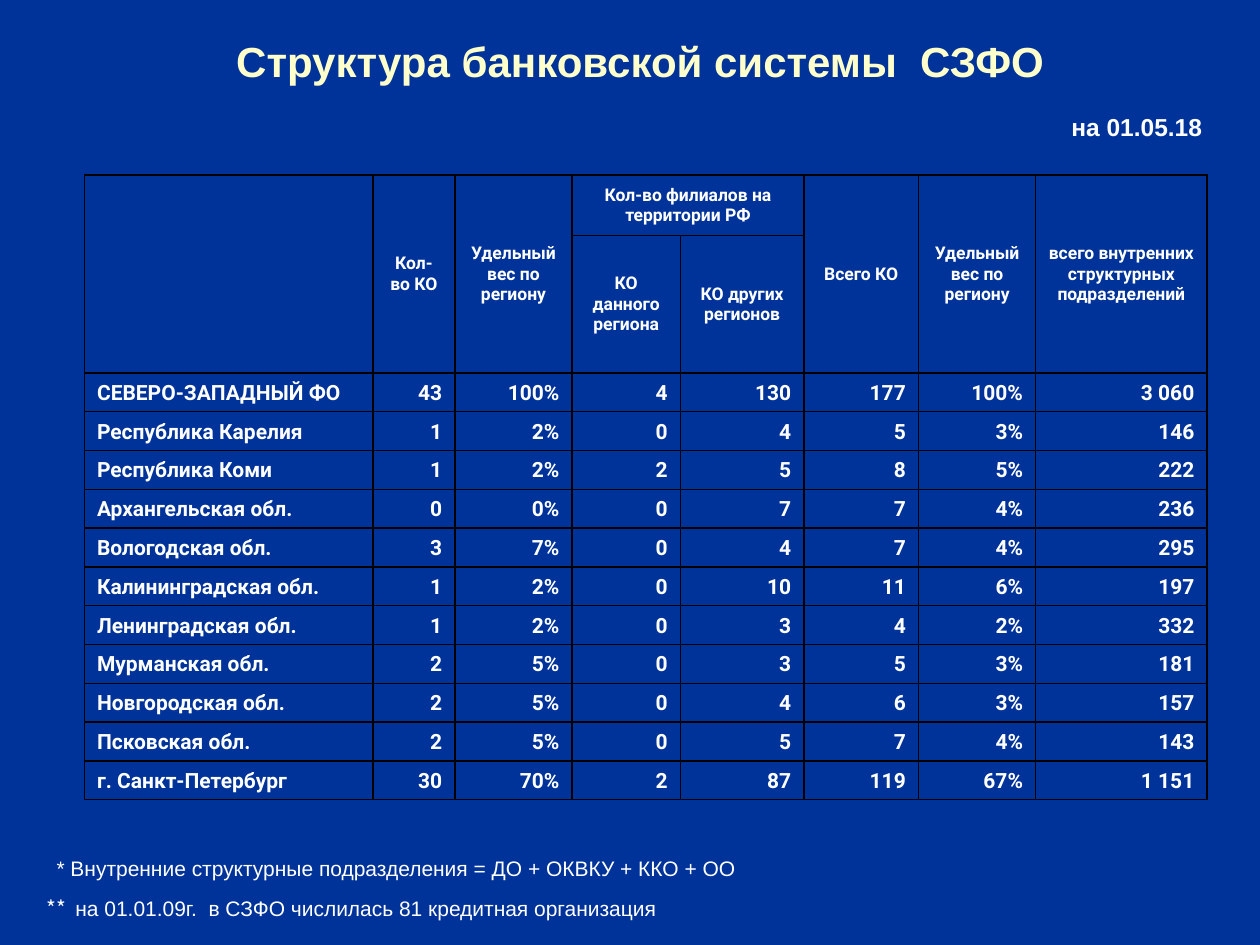
import pptx
import pptx.dml.color
import pptx.enum.text
import pptx.oxml
import pptx.oxml.ns
import pptx.util

ALIGN = pptx.enum.text.PP_ALIGN
ANCHOR = pptx.enum.text.MSO_ANCHOR

WIDTH, HEIGHT = 10, 7.5
BACKGROUND, WHITE, CREAM, BLACK = "003399", "FFFFFF", "FFFFCC", "000000"

# left, top, width, height, alignment, size, bold, colour, (text, font) runs
TEXTS = [
    (1.22, 0.21, 7.72, 0.55, ALIGN.CENTER, 24, True, CREAM,
     [("Структура банковской системы  СЗФО", "Arial")]),
    (0.27, 7.06, 6.93, 0.3, ALIGN.LEFT, 12, False, WHITE,
     [("**  ", "Noto Sans CJK KR"),
      ("на 01.01.09г.  в СЗФО числилась 81 кредитная организация", "Arial")]),
    (0.35, 6.74, 5.91, 0.3, ALIGN.LEFT, 12, False, WHITE,
     [("* Внутренние структурные подразделения = ДО + ОКВКУ + ККО + ОО", "Arial")]),
    (7.36, 0.84, 2.28, 0.33, ALIGN.RIGHT, 14, True, WHITE,
     [("на 01.05.18", "Arial")]),
]

HEADERS = [
    ["", "Кол-во КО", "Удельный вес по региону", "Кол-во филиалов на территории РФ", "",
     "Всего КО", "Удельный вес по региону", "всего внутренних структурных подразделений"],
    ["", "", "", "КО данного региона", "КО других регионов", "", "", ""],
]
REGIONS = [
    ["СЕВЕРО-ЗАПАДНЫЙ ФО", "43", "100%", "4", "130", "177", "100%", "3 060"],
    ["Республика Карелия", "1", "2%", "0", "4", "5", "3%", "146"],
    ["Республика Коми", "1", "2%", "2", "5", "8", "5%", "222"],
    ["Архангельская обл.", "0", "0%", "0", "7", "7", "4%", "236"],
    ["Вологодская обл.", "3", "7%", "0", "4", "7", "4%", "295"],
    ["Калининградская обл.", "1", "2%", "0", "10", "11", "6%", "197"],
    ["Ленинградская обл.", "1", "2%", "0", "3", "4", "2%", "332"],
    ["Мурманская обл.", "2", "5%", "0", "3", "5", "3%", "181"],
    ["Новгородская обл.", "2", "5%", "0", "4", "6", "3%", "157"],
    ["Псковская обл.", "2", "5%", "0", "5", "7", "4%", "143"],
    ["г. Санкт-Петербург", "30", "70%", "2", "87", "119", "67%", "1 151"],
]
TABLE_LEFT, TABLE_TOP, TABLE_HEIGHT = 0.67, 1.39, 4.96
COLUMN_WIDTHS = [2.29, 0.65, 0.93, 0.86, 0.98, 0.91, 0.93, 1.36]
HEADER_HEIGHTS = [0.48, 1.09]
BRANCH_COLUMNS = (3, 4)


def inches(*lengths):
    return [pptx.util.Inches(length) for length in lengths]


def rgb(colour):
    return pptx.dml.color.RGBColor.from_string(colour)


def style(run, font, size, bold, colour):
    run.font.name = font
    run.font.size = pptx.util.Pt(size)
    run.font.bold = bold
    run.font.color.rgb = rgb(colour)


def add_text(slide, left, top, width, height, align, size, bold, colour, runs):
    frame = slide.shapes.add_textbox(*inches(left, top, width, height)).text_frame
    frame.word_wrap = True
    frame.vertical_anchor = ANCHOR.MIDDLE if size == 24 else ANCHOR.TOP
    paragraph = frame.paragraphs[0]
    paragraph.alignment = align
    for text, font in runs:
        run = paragraph.add_run()
        run.text = text
        style(run, font, size, bold, colour)


def set_borders(cell, colour, points):
    properties = cell._tc.get_or_add_tcPr()
    for side in ("lnL", "lnR", "lnT", "lnB"):
        properties.append(pptx.oxml.parse_xml(
            f'<a:{side} {pptx.oxml.ns.nsdecls("a")} w="{pptx.util.Pt(points)}">'
            f'<a:solidFill><a:srgbClr val="{colour}"/></a:solidFill></a:{side}>'))


def add_region_table(slide):
    rows = HEADERS + REGIONS
    row_height = (TABLE_HEIGHT - sum(HEADER_HEIGHTS)) / len(REGIONS)
    heights = HEADER_HEIGHTS + [row_height] * len(REGIONS)
    table = slide.shapes.add_table(
        len(rows), len(COLUMN_WIDTHS),
        *inches(TABLE_LEFT, TABLE_TOP, sum(COLUMN_WIDTHS), TABLE_HEIGHT)).table
    table.first_row = table.horz_banding = False
    for column, width in zip(table.columns, inches(*COLUMN_WIDTHS)):
        column.width = width
    for row, height in zip(table.rows, inches(*heights)):
        row.height = height

    for r, values in enumerate(rows):
        is_header = r < len(HEADERS)
        for c, value in enumerate(values):
            cell = table.cell(r, c)
            set_borders(cell, BLACK, 1)
            cell.fill.background()
            cell.vertical_anchor = ANCHOR.MIDDLE if is_header else ANCHOR.BOTTOM
            paragraph = cell.text_frame.paragraphs[0]
            paragraph.text = value
            paragraph.alignment = (ALIGN.CENTER if is_header
                                   else ALIGN.RIGHT if c else ALIGN.LEFT)
            for run in paragraph.runs:
                style(run, "Roboto", 10 if is_header else 12, True, WHITE)

    first, last = BRANCH_COLUMNS
    table.cell(0, first).merge(table.cell(0, last))
    for c in range(len(COLUMN_WIDTHS)):
        if c not in BRANCH_COLUMNS:
            table.cell(0, c).merge(table.cell(1, c))


def main():
    deck = pptx.Presentation()
    deck.slide_width, deck.slide_height = inches(WIDTH, HEIGHT)
    slide = deck.slides.add_slide(deck.slide_layouts[6])
    slide.background.fill.solid()
    slide.background.fill.fore_color.rgb = rgb(BACKGROUND)
    for text in TEXTS:
        add_text(slide, *text)
    add_region_table(slide)
    deck.save("out.pptx")


if __name__ == "__main__":
    main()
